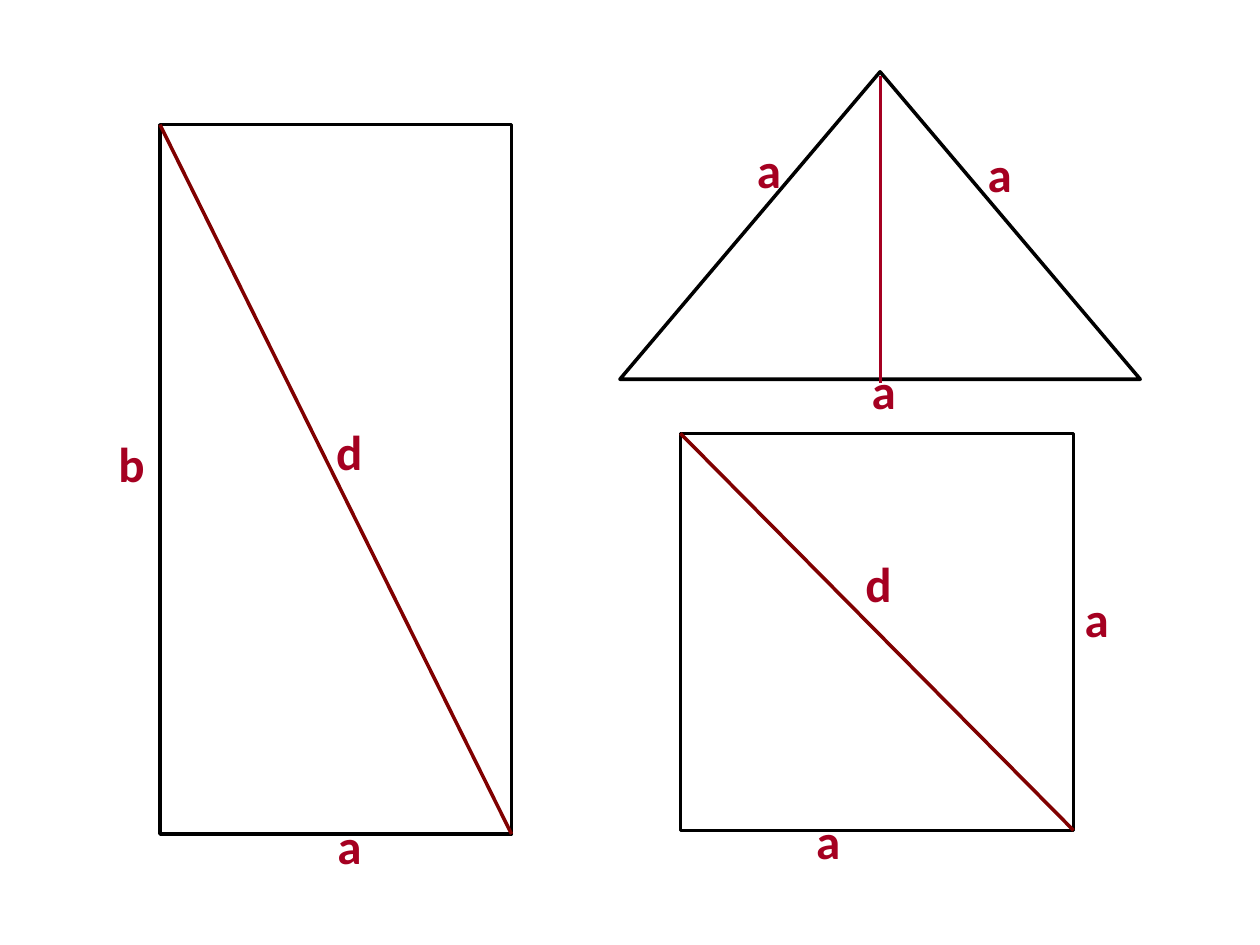
"""Build a slide of a triangle, a rectangle and a square with labelled sides."""
import dataclasses
import typing

import pptx
import pptx.dml.color
import pptx.enum.shapes
import pptx.enum.text
import pptx.oxml
import pptx.util

Inches = pptx.util.Inches
SHAPES = pptx.enum.shapes.MSO_SHAPE


@dataclasses.dataclass(frozen=True)
class Theme:
    outline: str = "000000"
    height: str = "A50021"
    diagonal: str = "800000"
    label: str = "A50021"
    font: str = "Calibri"
    label_size: int = 28
    line_width: int = 2


class Label(typing.NamedTuple):
    text: str
    left: float
    top: float
    width: float = 0.4


class Segment(typing.NamedTuple):
    start: tuple[float, float]
    end: tuple[float, float]
    color: str


class Figure(typing.NamedTuple):
    preset: SHAPES
    left: float
    top: float
    width: float
    height: float
    segment: Segment
    labels: tuple[Label, ...]
    grouped: bool = True


THEME = Theme()
LABEL_HEIGHT = 0.57


def quadrilateral(left: float, top: float, width: float, height: float,
                  *labels: Label) -> Figure:
    """Describe a rectangle with its falling diagonal."""
    diagonal = Segment((left, top), (left + width, top + height), THEME.diagonal)
    return Figure(SHAPES.RECTANGLE, left, top, width, height, diagonal, labels)


FIGURES = (
    Figure(SHAPES.ISOSCELES_TRIANGLE, 4.92, 0.57, 4.13, 2.44,
           Segment((6.99, 0.6), (6.99, 3.04), THEME.height),
           (Label("а", 6.82, 2.81), Label("а", 5.91, 1.06), Label("а", 7.74, 1.09)),
           grouped=False),
    quadrilateral(1.27, 0.99, 2.79, 5.63,
                  Label("а", 2.58, 6.42), Label("b", 0.84, 3.39, 0.52),
                  Label("d", 2.57, 3.3, 0.77)),
    quadrilateral(5.4, 3.44, 3.12, 3.15,
                  Label("а", 8.51, 4.62), Label("а", 6.38, 6.38),
                  Label("d", 6.77, 4.34, 1.46)),
)


def style_line(line: typing.Any, color: str) -> None:
    """Set the colour and width of a line."""
    line.color.rgb = pptx.dml.color.RGBColor.from_string(color)
    line.width = pptx.util.Pt(THEME.line_width)


def write_text(frame: typing.Any, text: str, *, size: int, color: str,
               bold: bool = False) -> None:
    """Fill a text frame with one formatted run."""
    frame.word_wrap = True
    frame.auto_size = pptx.enum.text.MSO_AUTO_SIZE.SHAPE_TO_FIT_TEXT
    run = frame.paragraphs[0].add_run()
    run.text = text
    run.font.name = THEME.font
    run.font.size = pptx.util.Pt(size)
    run.font.bold = bold
    run.font.color.rgb = pptx.dml.color.RGBColor.from_string(color)


def draw_segment(shapes: typing.Any, segment: Segment) -> None:
    """Draw a height or diagonal as a straight connector."""
    connector = shapes.add_connector(
        pptx.enum.shapes.MSO_CONNECTOR.STRAIGHT,
        *(Inches(value) for value in segment.start + segment.end))
    style_line(connector.line, segment.color)
    connector._element.spPr.append(pptx.oxml.parse_xml(
        '<a:effectLst xmlns:a="http://schemas.openxmlformats.org/drawingml/2006/main"/>'))


def draw_label(shapes: typing.Any, label: Label) -> None:
    """Draw the letter naming a side or diagonal."""
    box = shapes.add_textbox(Inches(label.left), Inches(label.top),
                             Inches(label.width), Inches(LABEL_HEIGHT))
    write_text(box.text_frame, label.text, size=THEME.label_size,
               color=THEME.label, bold=True)


def draw_figure(slide: typing.Any, figure: Figure) -> None:
    """Draw an outline with its inner segment and labels."""
    shapes = slide.shapes.add_group_shape().shapes if figure.grouped else slide.shapes
    outline = shapes.add_shape(figure.preset, Inches(figure.left), Inches(figure.top),
                               Inches(figure.width), Inches(figure.height))
    outline.shadow.inherit = False
    outline.fill.background()
    style_line(outline.line, THEME.outline)
    draw_segment(shapes, figure.segment)
    for label in figure.labels:
        draw_label(shapes, label)


def main() -> None:
    """Create and save the presentation."""
    presentation = pptx.Presentation()
    presentation.slide_width = Inches(10)
    presentation.slide_height = Inches(7.5)
    slide = presentation.slides.add_slide(presentation.slide_layouts[6])
    for figure in FIGURES:
        draw_figure(slide, figure)
    presentation.save("out.pptx")


if __name__ == "__main__":
    main()
